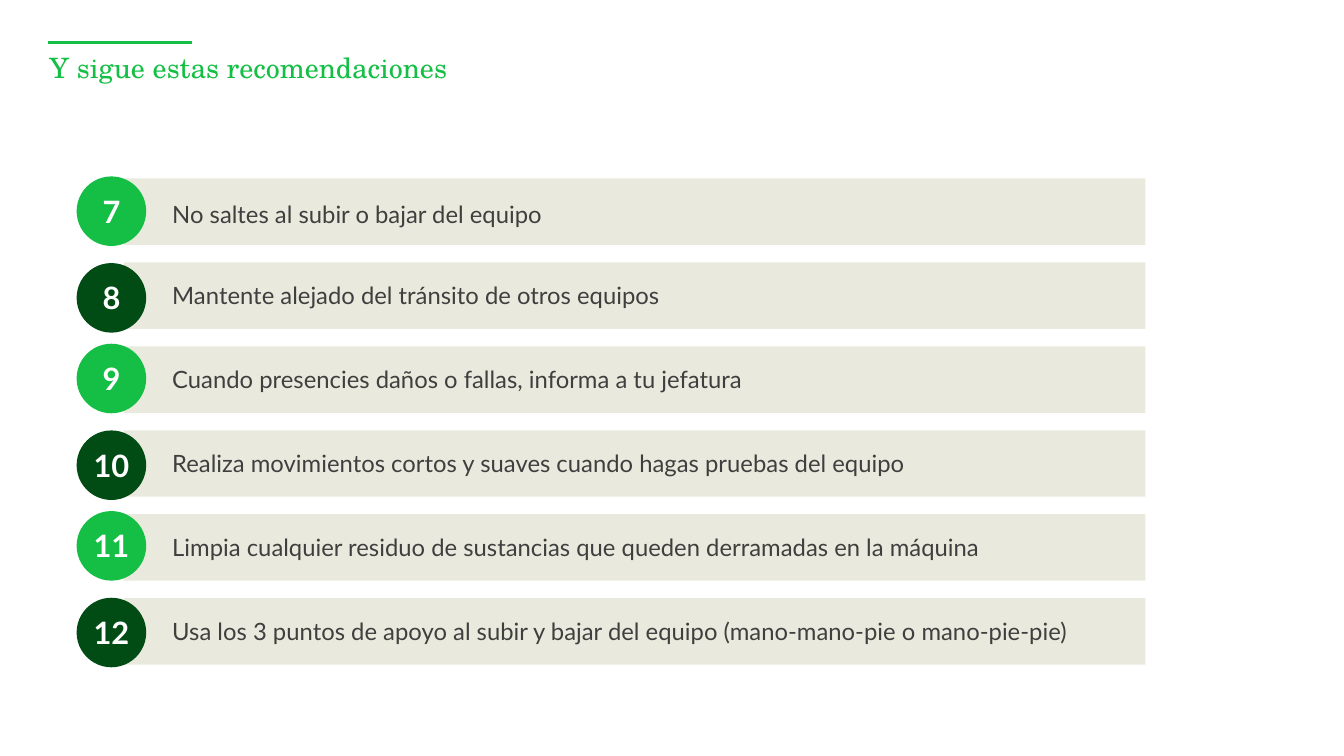
from lxml import etree
from pptx import Presentation
from pptx import util as u
from pptx.dml.color import RGBColor
from pptx.enum import shapes, text
from pptx.oxml.ns import qn

COLORS = {
    "green": "15BF45",
    "dark_green": "004C14",
    "bar": "E9EADD",
    "text": "3F3F3F",
    "white": "FFFFFF",
}

BAR_TOP, BAR_PITCH = 1.77, 0.833
CIRCLE_TOP, CIRCLE_PAIR_PITCH, CIRCLE_STEP = 1.75, 1.66, 0.86

RECOMMENDATIONS = [
    ("No saltes al subir o bajar del equipo", 5.95, 0.16),
    ("Mantente alejado del tránsito de otros equipos", 6.63, 0.13),
    ("Cuando presencies daños o fallas, informa a tu jefatura", 7.76, 0.13),
    ("Realiza movimientos cortos y suaves cuando hagas pruebas del equipo", 9.37, 0.13),
    ("Limpia cualquier residuo de sustancias que queden derramadas en la máquina", 9.75, 0.13),
    ("Usa los 3 puntos de apoyo al subir y bajar del equipo (mano-mano-pie o mano-pie-pie)", 10.98, 0.13),
]


def rgb(name):
    return RGBColor.from_string(COLORS[name])


def write(frame, content, *, size, color, font="Lato", bold=False, spacing=None):
    frame.text = content
    paragraph = frame.paragraphs[0]
    paragraph.alignment = text.PP_ALIGN.LEFT
    paragraph.space_before = u.Pt(0)
    if spacing:
        paragraph.line_spacing = spacing
    run_font = paragraph.runs[0].font
    run_font.name = font
    run_font.size = u.Pt(size)
    run_font.bold = bold
    run_font.color.rgb = rgb(color)


class RecommendationSlide:
    heading_font = "TeX Gyre Schola"

    def __init__(self, presentation):
        self.slide = presentation.slides.add_slide(presentation.slide_layouts[5])

    def title(self, content, left, top, width, height):
        shape = self.slide.shapes.title
        shape.left, shape.top = u.Inches(left), u.Inches(top)
        shape.width, shape.height = u.Inches(width), u.Inches(height)
        frame = shape.text_frame
        frame.margin_left = frame.margin_right = 0
        frame.margin_top = frame.margin_bottom = 0
        frame.vertical_anchor = text.MSO_ANCHOR.TOP
        frame.auto_size = text.MSO_AUTO_SIZE.NONE
        write(frame, content, size=20, color="green", font=self.heading_font, spacing=0.9)

    def rule(self, left, right, top):
        line = self.slide.shapes.add_connector(
            shapes.MSO_CONNECTOR.STRAIGHT,
            u.Inches(left), u.Inches(top), u.Inches(right), u.Inches(top),
        )
        line.line.color.rgb = rgb("green")
        line.line.width = u.Pt(1.75)
        etree.SubElement(line._element.spPr, qn("a:effectLst"))

    def block(self, kind, left, top, width, height, color):
        shape = self.slide.shapes.add_shape(
            kind, u.Inches(left), u.Inches(top), u.Inches(width), u.Inches(height)
        )
        shape.shadow.inherit = False
        shape.fill.solid()
        shape.fill.fore_color.rgb = rgb(color)
        shape.line.fill.background()

    def label(self, content, left, top, width, height, **style):
        box = self.slide.shapes.add_textbox(
            u.Inches(left), u.Inches(top), u.Inches(width), u.Inches(height)
        )
        frame = box.text_frame
        frame.word_wrap = True
        frame.auto_size = text.MSO_AUTO_SIZE.SHAPE_TO_FIT_TEXT
        write(frame, content, **style)

    def recommendation(self, index, content, width, offset):
        number = index + 7
        pair, second = divmod(index, 2)
        bar_top = BAR_TOP + index * BAR_PITCH
        circle_top = CIRCLE_TOP + pair * CIRCLE_PAIR_PITCH + second * CIRCLE_STEP
        circle_color = "dark_green" if second else "green"
        number_left = 0.92 if number < 10 else 0.83
        self.block(shapes.MSO_SHAPE.RECTANGLE, 1.23, bar_top, 10.13, 0.66, "bar")
        self.block(shapes.MSO_SHAPE.OVAL, 0.76, circle_top, 0.69, 0.69, circle_color)
        self.label(str(number), number_left, circle_top + 0.11, 0.82, 0.47,
                   size=22, color="white", bold=True)
        self.label(content, 1.61, bar_top + offset, width, 0.39, size=17, color="text")


def main():
    presentation = Presentation()
    presentation.slide_width = u.Inches(13.33)
    presentation.slide_height = u.Inches(7.5)
    page = RecommendationSlide(presentation)
    page.rule(0.48, 1.9, 0.42)
    page.title("Y sigue estas recomendaciones", 0.49, 0.54, 10.79, 0.57)
    for index, (content, width, offset) in enumerate(RECOMMENDATIONS):
        page.recommendation(index, content, width, offset)
    presentation.save("out.pptx")


if __name__ == "__main__":
    main()
